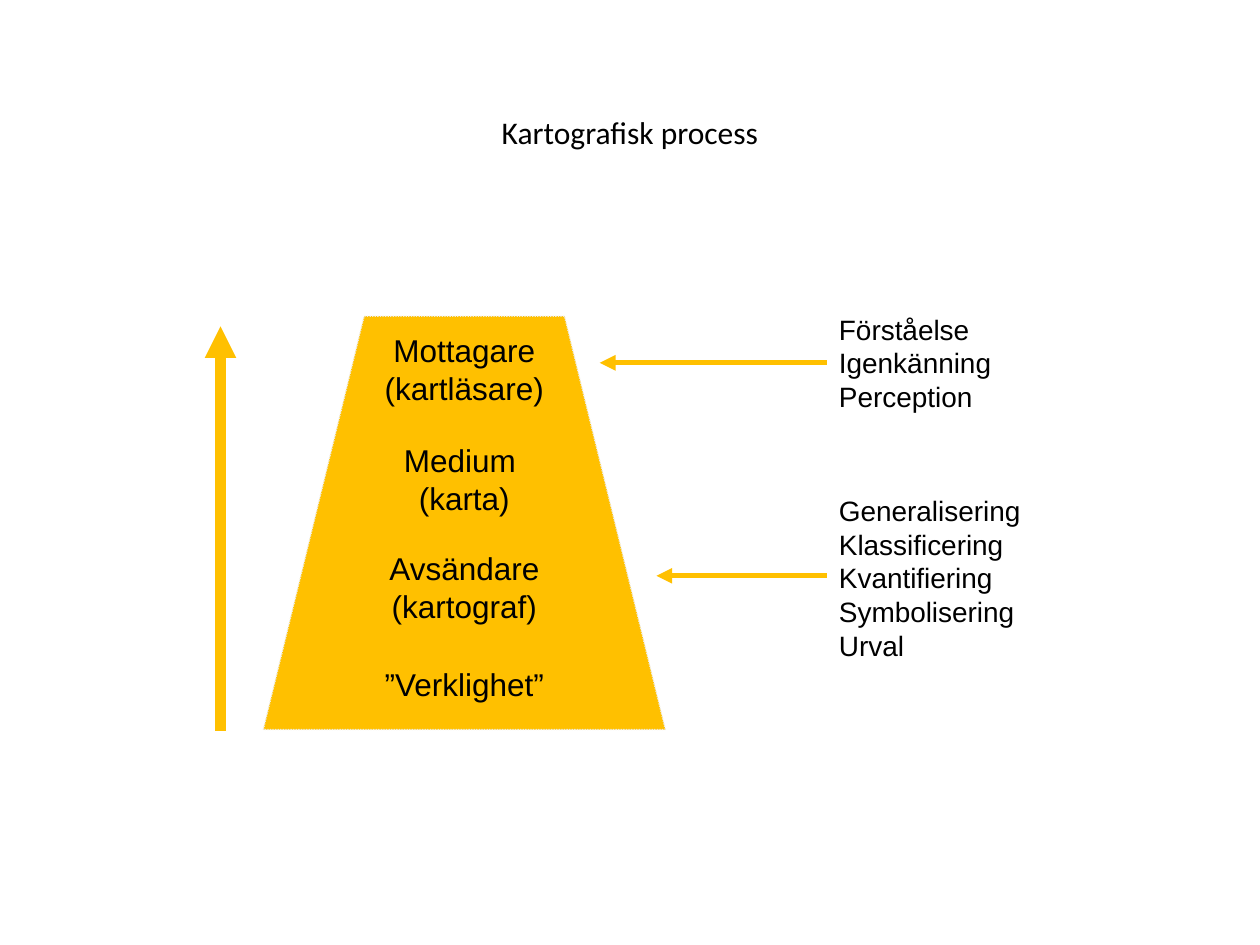
import dataclasses
import typing

import pptx
import pptx.dml.color
import pptx.enum.dml
import pptx.enum.shapes
import pptx.enum.text
import pptx.oxml
import pptx.oxml.ns
import pptx.util

AMBER = pptx.dml.color.RGBColor(0xFF, 0xC0, 0x00)
CREAM = pptx.dml.color.RGBColor(0xEE, 0xEC, 0xE1)
BLACK = pptx.dml.color.RGBColor(0x00, 0x00, 0x00)

COLUMNS, ROWS = 100, 75
CELL = pptx.util.Inches(0.1)
ALIGN = pptx.enum.text.PP_ALIGN
ANCHOR = pptx.enum.text.MSO_ANCHOR

AXIS = 36.85  # centre column of the trapezoid
STAGE_WIDTH = 19.2
NOTE_LEFT = 65.6
NOTE_WIDTH = 17.1


@dataclasses.dataclass(frozen=True)
class Label:
    """Lines of text in a box whose place is given in grid cells."""
    lines: typing.Tuple[str, ...]
    left: float
    top: float
    width: float
    height: float
    size: int
    align: ALIGN


@dataclasses.dataclass(frozen=True)
class Arrow:
    """A line with its arrowhead at the end point."""
    start: typing.Tuple[float, float]
    end: typing.Tuple[float, float]
    weight: int


def stage(top: float, height: float, *lines: str) -> Label:
    return Label(lines, AXIS - STAGE_WIDTH / 2, top, STAGE_WIDTH, height, 18, ALIGN.CENTER)


def note(top: float, height: float, *lines: str) -> Label:
    return Label(lines, NOTE_LEFT, top, NOTE_WIDTH, height, 16, ALIGN.LEFT)


LABELS = (
    stage(25.8, 7.1, "Mottagare", "(kartläsare)"),
    stage(34.5, 7.1, "Medium ", "(karta)"),
    stage(43.1, 7.1, "Avsändare", "(kartograf)"),
    stage(52.3, 5, "”Verklighet”"),
    note(24.3, 9, "Förståelse", "Igenkänning", "Perception"),
    note(38.7, 14.4, "Generalisering", "Klassificering", "Kvantifiering",
         "Symbolisering", "Urval"),
)

ARROWS = (
    Arrow((17.5, 58), (17.5, 25.9), 6),
    Arrow((NOTE_LEFT, 45.7), (52.1, 45.7), 3),
    Arrow((NOTE_LEFT, 28.8), (47.6, 28.8), 3),
)

TRAPEZOID = ((AXIS + 15.95, 57.9), (AXIS + 7.95, 25.1),
             (AXIS - 7.95, 25.1), (AXIS - 15.95, 57.9))


def cells(count: float) -> int:
    return round(count * CELL)


def apply(target: typing.Any, values: typing.Dict[str, typing.Any]) -> None:
    for name, value in values.items():
        setattr(target, name, value)


def place(box: typing.Any, left: float, top: float, width: float, height: float) -> None:
    apply(box, {"left": cells(left), "top": cells(top),
                "width": cells(width), "height": cells(height)})


def write(box: typing.Any, lines: typing.Sequence[str], font: str, size: int,
          align: ALIGN, anchor: ANCHOR) -> None:
    frame = box.text_frame
    apply(frame, {"word_wrap": True, "vertical_anchor": anchor,
                  "auto_size": pptx.enum.text.MSO_AUTO_SIZE.NONE})
    for index, line in enumerate(lines):
        para = frame.add_paragraph() if index else frame.paragraphs[0]
        para.alignment = align
        span = para.add_run()
        span.text = line
        apply(span.font, {"name": font, "size": pptx.util.Pt(size)})
        span.font.color.rgb = BLACK


def add_label(page: typing.Any, label: Label) -> None:
    box = page.shapes.add_textbox(0, 0, 0, 0)
    place(box, label.left, label.top, label.width, label.height)
    write(box, label.lines, "Arial", label.size, label.align, ANCHOR.TOP)


def add_arrow(page: typing.Any, arrow: Arrow) -> None:
    points = [cells(value) for value in arrow.start + arrow.end]
    connector = page.shapes.add_connector(pptx.enum.shapes.MSO_CONNECTOR.STRAIGHT, *points)
    connector.line.color.rgb = AMBER
    connector.line.width = pptx.util.Pt(arrow.weight)
    head = pptx.oxml.parse_xml(
        f'<a:tailEnd {pptx.oxml.ns.nsdecls("a")} type="triangle"/>')
    connector.line._get_or_add_ln().append(head)
    properties = connector._element.spPr
    properties.append(pptx.oxml.parse_xml(f'<a:effectLst {pptx.oxml.ns.nsdecls("a")}/>'))


def add_trapezoid(page: typing.Any) -> None:
    first, *others = [(cells(x), cells(y)) for x, y in TRAPEZOID]
    builder = page.shapes.build_freeform(*first)
    builder.add_line_segments(others, close=True)
    shape = builder.convert_to_shape()
    shape.shadow.inherit = False
    shape.fill.solid()
    shape.fill.fore_color.rgb = AMBER
    shape.line.color.rgb = CREAM
    apply(shape.line, {"width": pptx.util.Pt(0.75),
                       "dash_style": pptx.enum.dml.MSO_LINE.ROUND_DOT})


def main() -> None:
    deck = pptx.Presentation()
    apply(deck, {"slide_width": cells(COLUMNS), "slide_height": cells(ROWS)})
    page = deck.slides.add_slide(deck.slide_layouts[5])
    title = page.shapes.title
    place(title, COLUMNS / 2 - 13, 8.5, 26, 4)
    write(title, ["Kartografisk process"], "Calibri", 18, ALIGN.CENTER, ANCHOR.MIDDLE)
    add_trapezoid(page)
    for label in LABELS:
        add_label(page, label)
    for arrow in ARROWS:
        add_arrow(page, arrow)
    deck.save("out.pptx")


if __name__ == "__main__":
    main()
